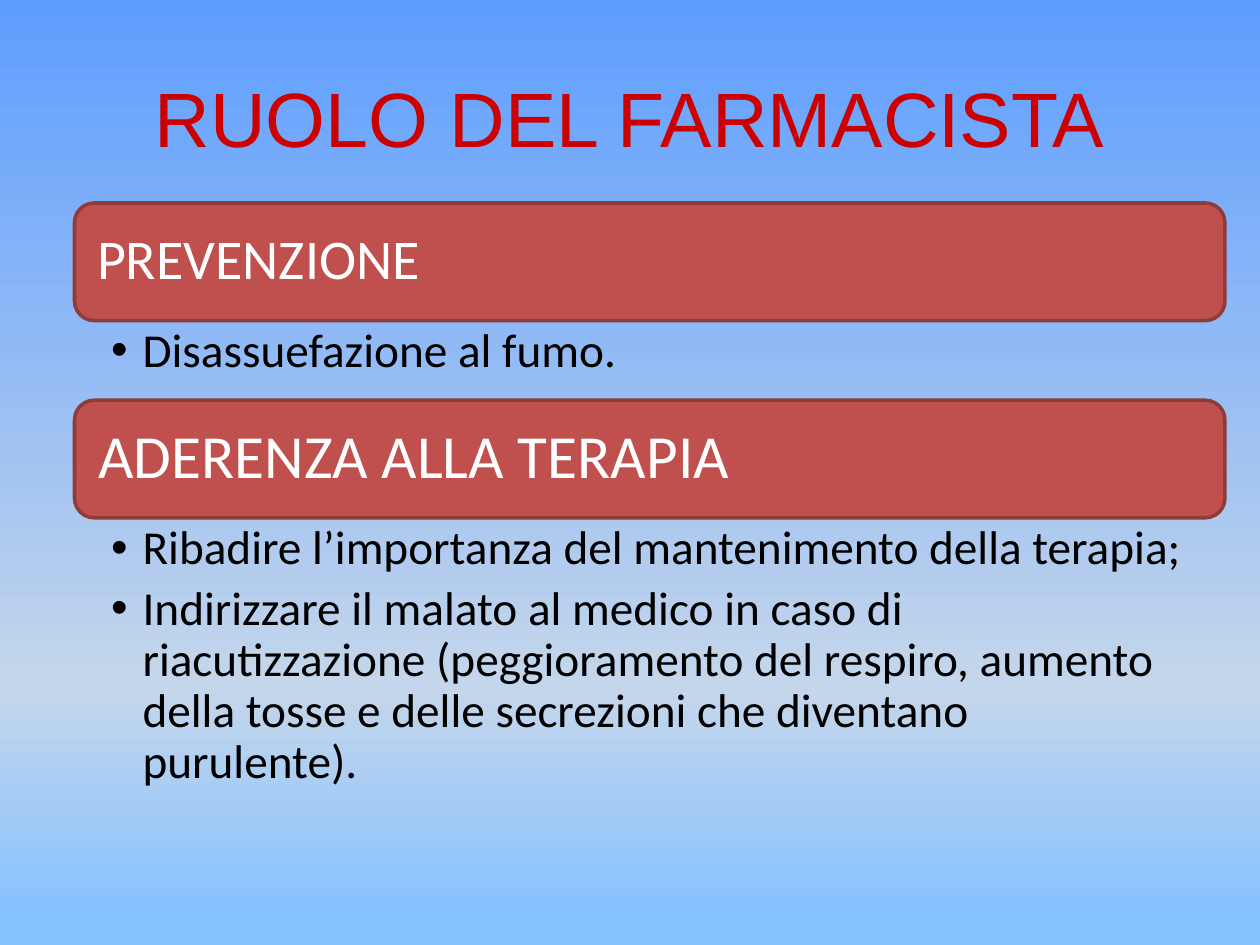
from copy import deepcopy

from lxml import etree
from pptx import Presentation
from pptx.dml.color import RGBColor
from pptx.enum import shapes, text
from pptx.oxml import ns
from pptx.util import Pt

TITLE_RED = RGBColor(0xCC, 0x00, 0x00)
BAND_RED = RGBColor(0xC0, 0x50, 0x4D)
BAND_EDGE = RGBColor(0x8E, 0x3B, 0x39)
WHITE = RGBColor(0xFF, 0xFF, 0xFF)
BLACK = RGBColor(0x00, 0x00, 0x00)
SKY = [
    (0, RGBColor(0x5E, 0x9E, 0xFF)),
    (0.73, RGBColor(0xC4, 0xD6, 0xEB)),
    (0.97, RGBColor(0x85, 0xC2, 0xFF)),
]

LEFT, WIDTH = 42.6, 657.4
BAND_HEIGHT = 67.2

# heading, heading size, band top, height of the text below, points
SECTIONS = [
    ("PREVENZIONE", 32, 116, 45.4, ["Disassuefazione al fumo."]),
    ("ADERENZA ALLA TERAPIA", 35, 228.7, 207.4, [
        "Ribadire l’importanza del mantenimento della terapia;",
        "Indirizzare il malato al medico in caso di riacutizzazione "
        "(peggioramento del respiro, aumento della tosse e delle secrezioni "
        "che diventano purulente).",
    ]),
]


def add_run(paragraph, words, font, size, color):
    run = paragraph.add_run()
    run.text = words
    run.font.name = font
    run.font.size = Pt(size)
    run.font.color.rgb = color


def set_frame(frame, anchor, left, top, right, bottom):
    """Wrap the text and set its anchor and margins in points."""
    frame.word_wrap = True
    frame.vertical_anchor = anchor
    frame.margin_left, frame.margin_top = Pt(left), Pt(top)
    frame.margin_right, frame.margin_bottom = Pt(right), Pt(bottom)


prs = Presentation()
prs.slide_width, prs.slide_height = Pt(720), Pt(540)
slide = prs.slides.add_slide(prs.slide_layouts[5])

# Background: three stops running from top to bottom
sky = slide.background.fill
sky.gradient()
sky.gradient_angle = 270
stop_list = slide.element.find(".//" + ns.qn("a:gsLst"))
stop_list.append(deepcopy(stop_list[-1]))
for stop, (position, color) in zip(sky.gradient_stops, SKY):
    stop.position = position
    stop.color.rgb = color

title = slide.shapes.title
title.left, title.top, title.width, title.height = Pt(36), Pt(21.6), Pt(648), Pt(90)
title.text_frame.vertical_anchor = text.MSO_ANCHOR.MIDDLE
title_line = title.text_frame.paragraphs[0]
title_line.alignment = text.PP_ALIGN.CENTER
add_run(title_line, "RUOLO DEL FARMACISTA", "Arial", 44, TITLE_RED)

for heading, heading_size, top, body_height, points in SECTIONS:
    band = slide.shapes.add_shape(
        shapes.MSO_SHAPE.ROUNDED_RECTANGLE,
        Pt(LEFT), Pt(top), Pt(WIDTH), Pt(BAND_HEIGHT))
    band.shadow.inherit = False
    band.fill.solid()
    band.fill.fore_color.rgb = BAND_RED
    band.line.color.rgb = BAND_EDGE
    band.line.width = Pt(2)
    inset = heading_size * 0.3
    set_frame(band.text_frame, text.MSO_ANCHOR.MIDDLE, inset, inset, inset, inset)
    heading_line = band.text_frame.paragraphs[0]
    heading_line.alignment = text.PP_ALIGN.LEFT
    heading_line.line_spacing = 0.9
    add_run(heading_line, heading, "Calibri", heading_size, WHITE)

    body = slide.shapes.add_textbox(
        Pt(LEFT), Pt(top + BAND_HEIGHT), Pt(WIDTH), Pt(body_height)).text_frame
    set_frame(body, text.MSO_ANCHOR.TOP, 20.9, 3.6, 19.4, 3.6)
    for number, point in enumerate(points):
        item = body.add_paragraph() if number else body.paragraphs[0]
        item.level = 1
        item.line_spacing = 0.9
        item.space_after = Pt(5.5)
        add_run(item, point, "Calibri", 27, BLACK)
        properties = item._p.get_or_add_pPr()
        properties.set("marL", str(Pt(18)))
        properties.set("indent", str(-Pt(18)))
        etree.SubElement(properties, ns.qn("a:buFont"), typeface="Arial")
        etree.SubElement(properties, ns.qn("a:buChar"), char="•")

prs.save("out.pptx")
